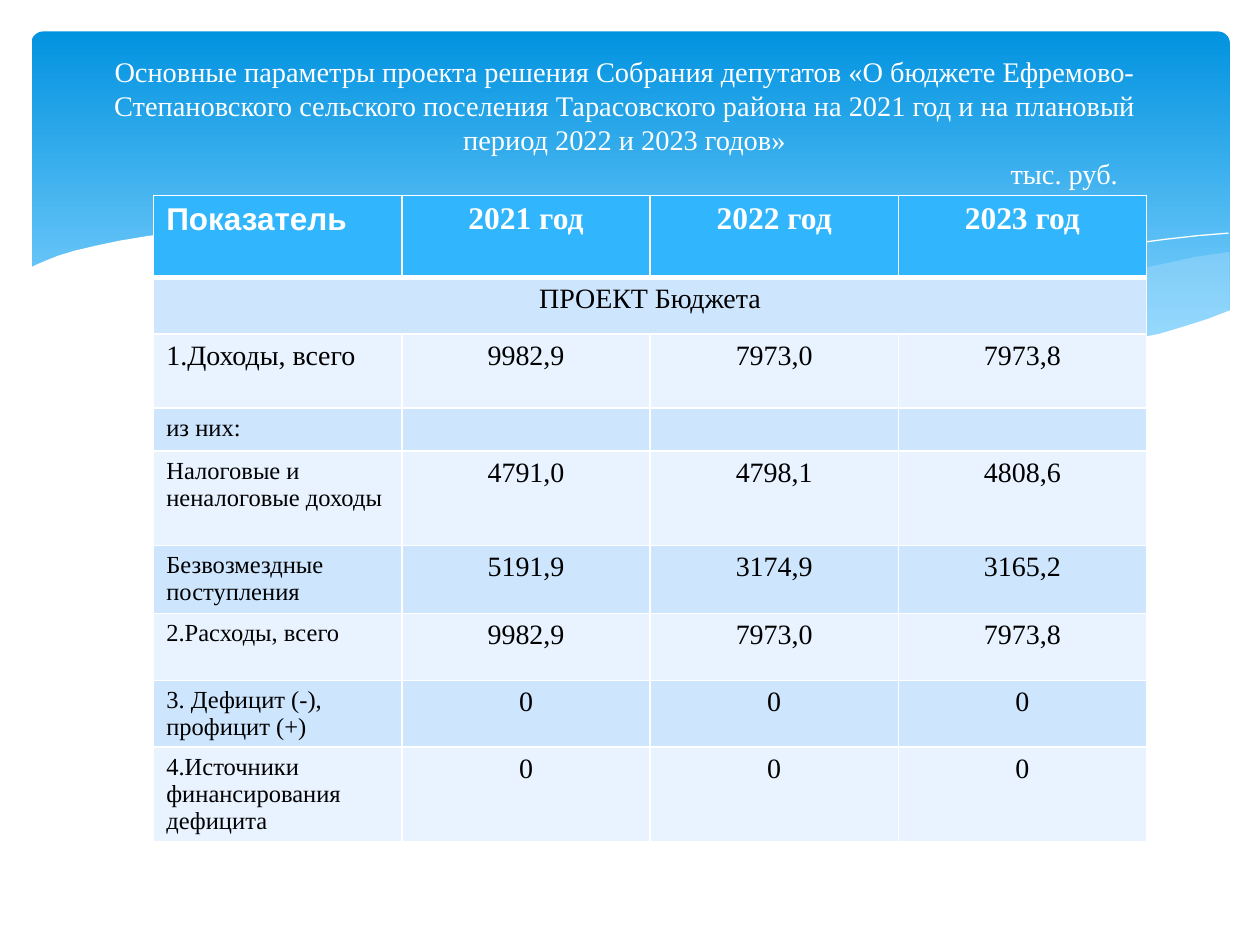
from lxml import etree
from pptx import Presentation
from pptx import util as u
from pptx.dml.color import RGBColor
from pptx.enum import shapes, text
from pptx.oxml.ns import qn


def paint(target, color, alpha=100):
    target.solid()
    target.fore_color.rgb = RGBColor.from_string(color)
    if alpha < 100:
        tint = target._xPr.find(qn("a:solidFill"))[0]
        etree.SubElement(tint, qn("a:alpha"), val=str(alpha * 1000))


def add_span(para, words, size, color, font="Times New Roman", bold=False):
    span = para.add_run()
    span.text = words
    span.font.size = u.Pt(size)
    span.font.name = font
    span.font.bold = bold
    span.font.color.rgb = RGBColor.from_string(color)


deck = Presentation()
deck.slide_width, deck.slide_height = u.Inches(10), u.Inches(7.5)
page = deck.slides.add_slide(deck.slide_layouts[5])
paint(page.background.fill, "FFFFFF")

banner = page.shapes.add_shape(shapes.MSO_SHAPE.ROUNDED_RECTANGLE, u.Inches(0.25),
                               u.Inches(0.25), u.Inches(9.51), u.Inches(2.7))
banner.adjustments[0] = 0.034
banner.shadow.inherit = False
banner.line.fill.background()
banner.fill.gradient()
banner.fill.gradient_angle = 270
for stop, (position, color) in zip(banner.fill.gradient_stops, [(0, "0293E0"), (0.9, "83D3FE")]):
    stop.position = position
    stop.color.rgb = RGBColor.from_string(color)

# Wave points are in hundredths of an inch.
right_wave = [
    (975, 200), (948, 204), (921, 210), (891, 216), (861, 223), (805, 237), (753, 248),
    (706, 257), (661, 265), (691, 269), (719, 272), (745, 275), (769, 277), (803, 278),
    (835, 277), (863, 275), (889, 272), (913, 267), (935, 262), (949, 257), (963, 252),
    (976, 247), (976, 200)]
middle_wave = [
    (893, 273), (866, 269), (807, 260), (741, 247), (668, 231), (629, 222), (598, 214),
    (569, 208), (541, 203), (514, 198), (489, 194), (442, 189), (399, 186), (361, 185),
    (328, 187), (299, 189), (286, 191), (323, 196), (362, 203), (404, 211), (449, 222),
    (491, 232), (530, 240), (566, 248), (601, 255), (634, 261), (665, 266), (695, 270),
    (722, 274), (748, 276), (773, 277), (796, 278), (828, 278), (857, 277), (876, 275)]
long_crest = [
    (309, 195), (328, 192), (353, 189), (387, 187), (433, 187), (469, 189), (510, 192),
    (556, 197), (608, 204), (665, 213), (727, 226), (795, 241), (869, 261), (907, 272)]
right_crest = [
    (613, 257), (653, 246), (695, 235), (748, 223), (806, 210), (866, 199), (895, 194),
    (924, 190), (951, 187), (975, 185)]
white_wave = [
    (977, 246), (959, 253), (940, 259), (920, 265), (899, 269), (875, 273), (850, 275),
    (823, 277), (793, 276), (761, 275), (726, 272), (688, 268), (648, 262), (603, 254),
    (555, 245), (503, 233), (447, 220), (391, 207), (340, 197), (292, 190), (250, 186),
    (211, 184), (177, 184), (146, 185), (119, 187), (95, 191), (76, 195), (59, 199),
    (46, 203), (36, 207), (29, 210), (23, 213), (23, 329), (977, 329)]

for points, color, alpha in [(right_wave, "C6E7FC", 29), (middle_wave, "C6E7FC", 40),
                             (long_crest, None, 0), (right_crest, None, 0),
                             (white_wave, "FFFFFF", 100)]:
    builder = page.shapes.build_freeform(*points[0], scale=u.Inches(0.01))
    builder.add_line_segments(points[1:], close=color is not None)
    wave = builder.convert_to_shape()
    wave.shadow.inherit = False
    if color:
        paint(wave.fill, color, alpha)
        wave.line.fill.background()
    else:
        wave.fill.background()
        paint(wave.line.fill, "FFFFFF")
        wave.line.width = u.Pt(0)

rows = [
    (0.65, 18, ["Показатель", "2021 год", "2022 год", "2023 год"]),
    (0.45, 16, ["ПРОЕКТ Бюджета", "", "", ""]),
    (0.59, 16, ["1.Доходы, всего", "9982,9", "7973,0", "7973,8"]),
    (0.34, 14, ["из них:", "", "", ""]),
    (0.75, 14, ["Налоговые и неналоговые доходы", "4791,0", "4798,1", "4808,6"]),
    (0.54, 14, ["Безвозмездные поступления", "5191,9", "3174,9", "3165,2"]),
    (0.53, 14, ["2.Расходы, всего", "9982,9", "7973,0", "7973,8"]),
    (0.53, 14, ["3. Дефицит (-), профицит (+)", "0", "0", "0"]),
    (0.75, 14, ["4.Источники финансирования дефицита", "0", "0", "0"]),
]
table = page.shapes.add_table(len(rows), 4, u.Inches(1.22), u.Inches(1.55),
                              u.Inches(7.87), u.Inches(5.13)).table
for column in table.columns:
    column.width = u.Inches(1.97)

for r, (height, label_size, words) in enumerate(rows):
    table.rows[r].height = u.Inches(height)
    header = r == 0
    for c, word in enumerate(words):
        cell = table.cell(r, c)
        paint(cell.fill, "31B6FD" if header else ("E8F3FF", "CEE5FE")[r % 2])
        para = cell.text_frame.paragraphs[0]
        if c or r == 1:
            para.alignment = text.PP_ALIGN.CENTER
        if word:
            size = 18 if header else 16 if c else label_size
            add_span(para, word, size, "FFFFFF" if header else "000000",
                     "Arial" if header and c == 0 else "Times New Roman", header)
        else:
            etree.SubElement(para._p, qn("a:endParaRPr"), sz=str(label_size * 100))
        properties = cell._tc.get_or_add_tcPr()
        for place, side in enumerate("LRTB"):
            thick = (header and side == "B") or (r == 1 and side == "T")
            border = etree.Element(qn("a:ln" + side), w=str(u.Pt(3 if thick else 1)))
            ink = etree.SubElement(border, qn("a:solidFill"))
            etree.SubElement(ink, qn("a:srgbClr"), val="FFFFFF")
            properties.insert(place, border)
table.cell(1, 0).merge(table.cell(1, 3))

title = page.shapes.title
title.left, title.top = u.Inches(0.5), u.Inches(0.55)
title.width, title.height = u.Inches(8.91), u.Inches(0.84)
page.shapes.element.append(title.element)
frame = title.text_frame
frame.word_wrap = True
frame.auto_size = text.MSO_AUTO_SIZE.NONE
frame.vertical_anchor = text.MSO_ANCHOR.MIDDLE
heading = frame.paragraphs[0]
heading.alignment = text.PP_ALIGN.CENTER
add_span(heading, "Основные параметры проекта решения Собрания депутатов «О бюджете "
         "Ефремово-Степановского сельского поселения Тарасовского района на 2021 год "
         "и на плановый период 2022 и 2023 годов»", 16.2, "FFFFFF")
unit = frame.add_paragraph()
unit.alignment = text.PP_ALIGN.LEFT
unit._p.get_or_add_pPr().set("marL", str(u.Inches(7.42)))
add_span(unit, "тыс. руб.", 16.2, "FFFFFF")
for para in frame.paragraphs:
    para.space_before = u.Pt(0)

deck.save("out.pptx")
